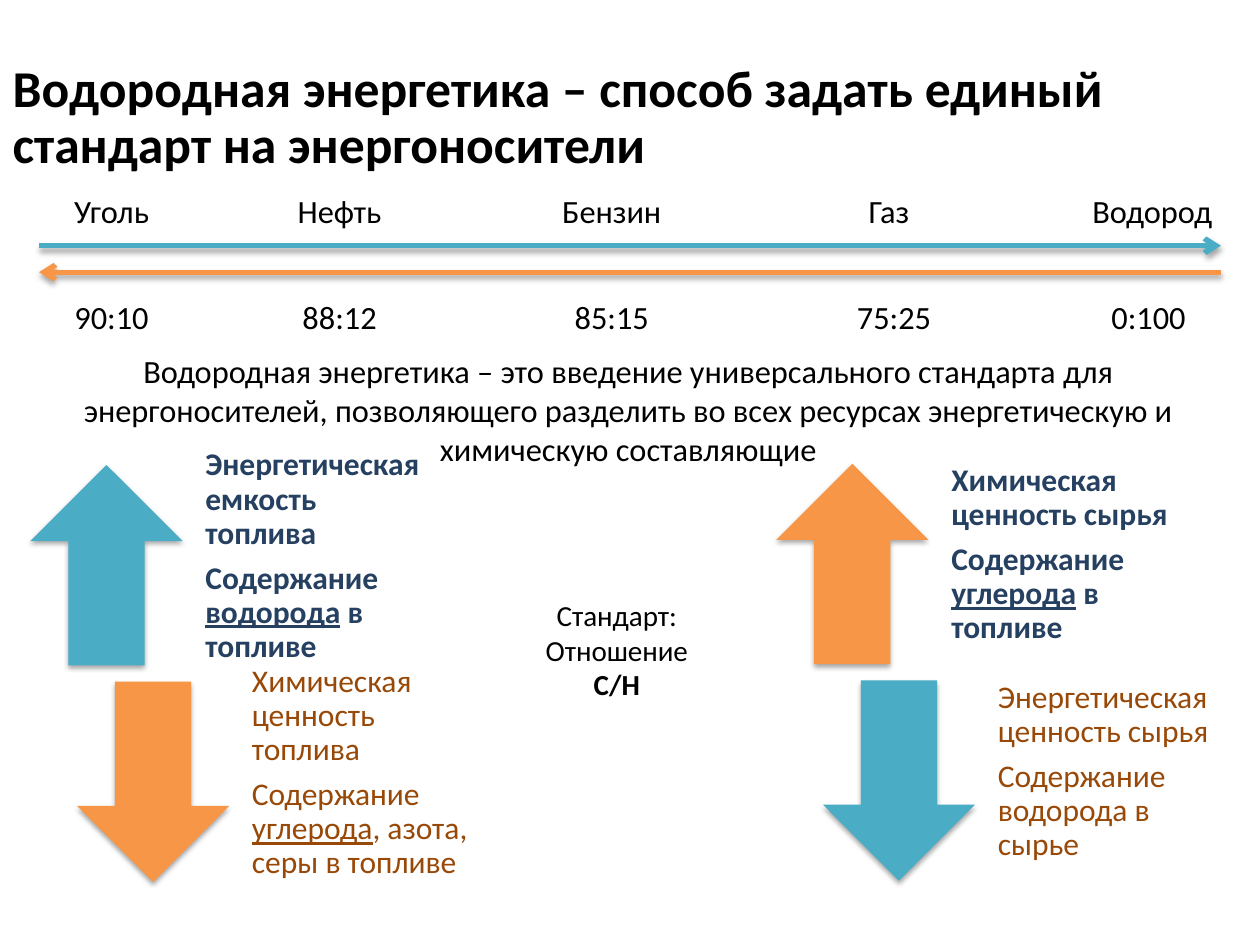
from dataclasses import dataclass

import lxml.etree
import pptx
import pptx.dml.color
import pptx.enum.shapes
import pptx.enum.text
import pptx.oxml.ns
import pptx.util

Inches = pptx.util.Inches
Pt = pptx.util.Pt
Shape = pptx.enum.shapes.MSO_SHAPE
Align = pptx.enum.text.PP_ALIGN
Anchor = pptx.enum.text.MSO_ANCHOR
AutoSize = pptx.enum.text.MSO_AUTO_SIZE
qn = pptx.oxml.ns.qn


@dataclass(frozen=True)
class Theme:
    font: str = "Calibri"
    black: str = "000000"
    teal: str = "4BACC6"
    orange: str = "F79646"
    navy: str = "254061"
    brown: str = "984807"
    title_size: float = 29.5
    text_size: float = 18.5
    effect_size: float = 18
    standard_size: float = 16.6


THEME = Theme()


@dataclass(frozen=True)
class Fuel:
    name: str
    ratio: str
    name_left: float
    name_width: float
    ratio_left: float


@dataclass(frozen=True)
class Effect:
    """A block arrow and its two paragraphs; odd spans of the second are underlined."""
    arrow_color: str
    heading: str
    content: tuple[str, ...]


@dataclass(frozen=True)
class EffectPair:
    left: float
    top: float
    rising: Effect
    falling: Effect


FUELS = (
    Fuel("Уголь", "90:10", 0.38, 1.01, 0.38),
    Fuel("Нефть", "88:12", 2.19, 1.01, 2.19),
    Fuel("Бензин", "85:15", 4.35, 1.01, 4.35),
    Fuel("Газ", "75:25", 6.44, 1.23, 6.59),
    Fuel("Водород", "0:100", 8.53, 1.23, 8.61),
)
EFFECT_PAIRS = (
    EffectPair(
        0.24, 3.69,
        Effect(THEME.teal, "Энергетическая емкость топлива",
               ("Содержание ", "водорода", " в топливе")),
        Effect(THEME.orange, "Химическая ценность топлива",
               ("Содержание ", "углерода", ", азота, серы в топливе")),
    ),
    EffectPair(
        6.16, 3.68,
        Effect(THEME.orange, "Химическая ценность сырья",
               ("Содержание ", "углерода", " в топливе")),
        Effect(THEME.teal, "Энергетическая ценность сырья",
               ("Содержание водорода в сырье",)),
    ),
)


def rgb(color: str) -> pptx.dml.color.RGBColor:
    return pptx.dml.color.RGBColor.from_string(color)


def style_paragraph(para, size: float, color: str = THEME.black, bold: bool = False) -> None:
    para.font.name = THEME.font
    para.font.size = Pt(size)
    para.font.bold = bold
    para.font.color.rgb = rgb(color)


def add_soft_shadow(shape) -> None:
    """Add a shadow straight below; call after fill and line are set."""
    effects = lxml.etree.SubElement(shape._element.spPr, qn("a:effectLst"))
    shadow = lxml.etree.SubElement(
        effects, qn("a:outerShdw"), blurRad=str(Pt(3.1)), dist=str(Pt(1.8)),
        dir="5400000", rotWithShape="0")
    color = lxml.etree.SubElement(shadow, qn("a:srgbClr"), val=THEME.black)
    lxml.etree.SubElement(color, qn("a:alpha"), val="35000")


def add_title(page, text: str) -> None:
    title = page.shapes.title
    title.left, title.top = Inches(0), Inches(0.29)
    title.width, title.height = Inches(10), Inches(1.3)
    frame = title.text_frame
    frame.text = text
    frame.word_wrap = True
    frame.auto_size = AutoSize.NONE
    frame.vertical_anchor = Anchor.MIDDLE
    para = frame.paragraphs[0]
    para.alignment = Align.LEFT
    para.line_spacing = 0.9
    style_paragraph(para, THEME.title_size, bold=True)


def add_centered_text(page, left: float, top: float, width: float, height: float,
                      lines: tuple[str, ...], size: float = THEME.text_size):
    box = page.shapes.add_textbox(Inches(left), Inches(top), Inches(width), Inches(height))
    frame = box.text_frame
    frame.word_wrap = True
    frame.auto_size = AutoSize.SHAPE_TO_FIT_TEXT
    frame.text = "\n".join(lines)
    for para in frame.paragraphs:
        para.alignment = Align.CENTER
        style_paragraph(para, size)
    return box


def add_scale_arrow(page, start: float, end: float, top: float, color: str) -> None:
    arrow = page.shapes.add_connector(
        pptx.enum.shapes.MSO_CONNECTOR.STRAIGHT,
        Inches(start), Inches(top), Inches(end), Inches(top))
    arrow.line.color.rgb = rgb(color)
    arrow.line.width = Pt(3)
    lxml.etree.SubElement(arrow.line._get_or_add_ln(), qn("a:tailEnd"), type="arrow")
    add_soft_shadow(arrow)


def add_effect(group, left: float, top: float, effect: Effect, rising: bool) -> None:
    height = Inches(1.59)
    arrow = group.shapes.add_shape(
        Shape.UP_ARROW if rising else Shape.DOWN_ARROW,
        Inches(left), Inches(top), Inches(1.21), height)
    arrow.fill.solid()
    arrow.fill.fore_color.rgb = rgb(effect.arrow_color)
    arrow.line.fill.background()
    add_soft_shadow(arrow)

    box = group.shapes.add_textbox(Inches(left + 1.25), Inches(top), Inches(2.06), height)
    frame = box.text_frame
    frame.word_wrap = True
    frame.vertical_anchor = Anchor.MIDDLE
    frame.margin_left = frame.margin_right = frame.margin_bottom = Inches(0.14)
    frame.margin_top = Inches(0)
    frame.text = effect.heading
    content = frame.add_paragraph()
    for index, text in enumerate(effect.content):
        span = content.add_run()
        span.text = text
        if index % 2:
            span.font.underline = True
    for para in frame.paragraphs:
        para.line_spacing = 0.9
        para.space_after = Pt(6.3)
        style_paragraph(para, THEME.effect_size,
                        THEME.navy if rising else THEME.brown, bold=rising)


def add_effect_pair(page, pair: EffectPair) -> None:
    group = page.shapes.add_group_shape()
    add_effect(group, pair.left, pair.top, pair.rising, rising=True)
    add_effect(group, pair.left + 0.37, pair.top + 1.72, pair.falling, rising=False)


def main() -> None:
    deck = pptx.Presentation()
    deck.slide_width, deck.slide_height = Inches(10), Inches(7.5)
    page = deck.slides.add_slide(deck.slide_layouts.get_by_name("Title Only"))

    add_title(page, "Водородная энергетика – способ задать единый стандарт на энергоносители")
    for pair in EFFECT_PAIRS:
        add_effect_pair(page, pair)
    standard = add_centered_text(page, 3.92, 4.69, 1.95, 0.94,
                                 ("Стандарт:", "Отношение", "С/Н"), THEME.standard_size)
    standard.text_frame.paragraphs[-1].font.bold = True
    add_scale_arrow(page, 0.31, 9.69, 1.95, THEME.teal)
    add_scale_arrow(page, 9.69, 0.31, 2.16, THEME.orange)
    add_centered_text(page, 0.14, 2.74, 9.69, 1.03, (
        "Водородная энергетика – это введение универсального стандарта для "
        "энергоносителей, позволяющего разделить во всех ресурсах "
        "энергетическую и химическую составляющие",))
    for fuel in FUELS:
        add_centered_text(page, fuel.name_left, 1.47, fuel.name_width, 0.41, (fuel.name,))
        add_centered_text(page, fuel.ratio_left, 2.31, 1.01, 0.41, (fuel.ratio,))
    deck.save("out.pptx")


if __name__ == "__main__":
    main()
